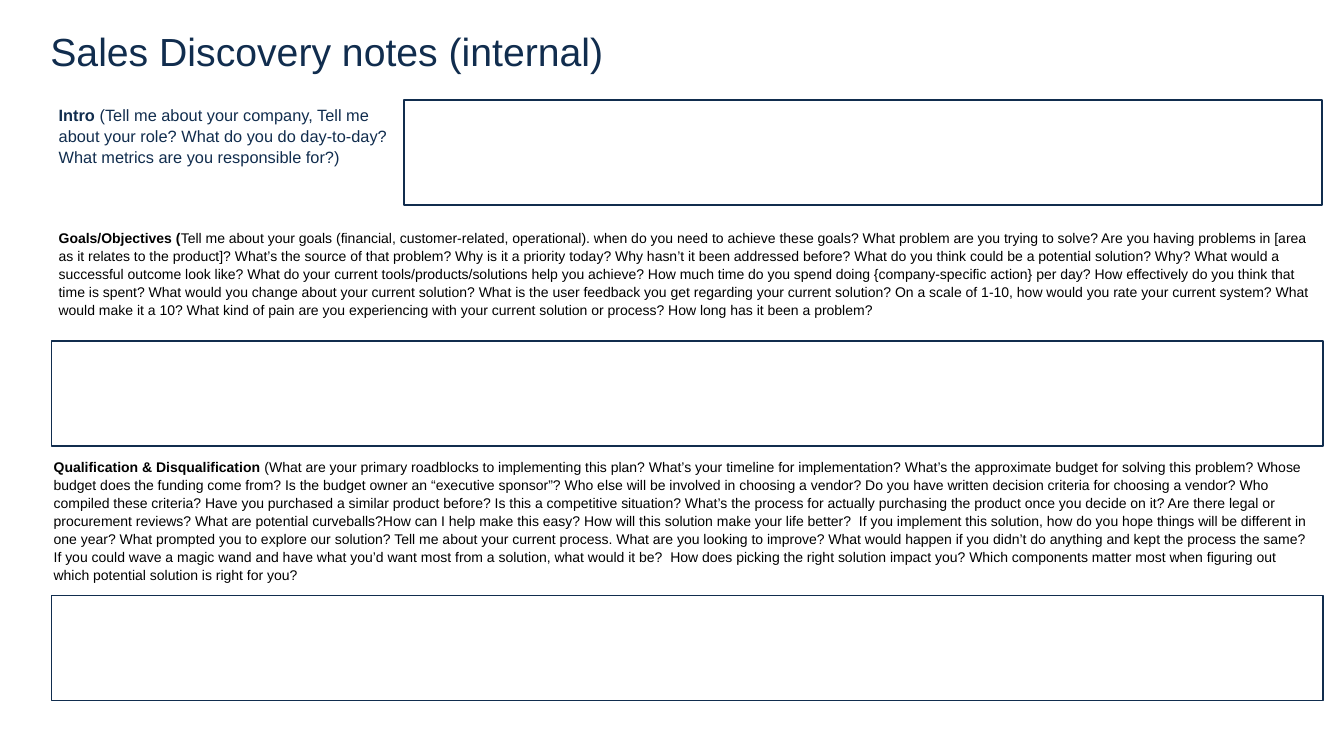
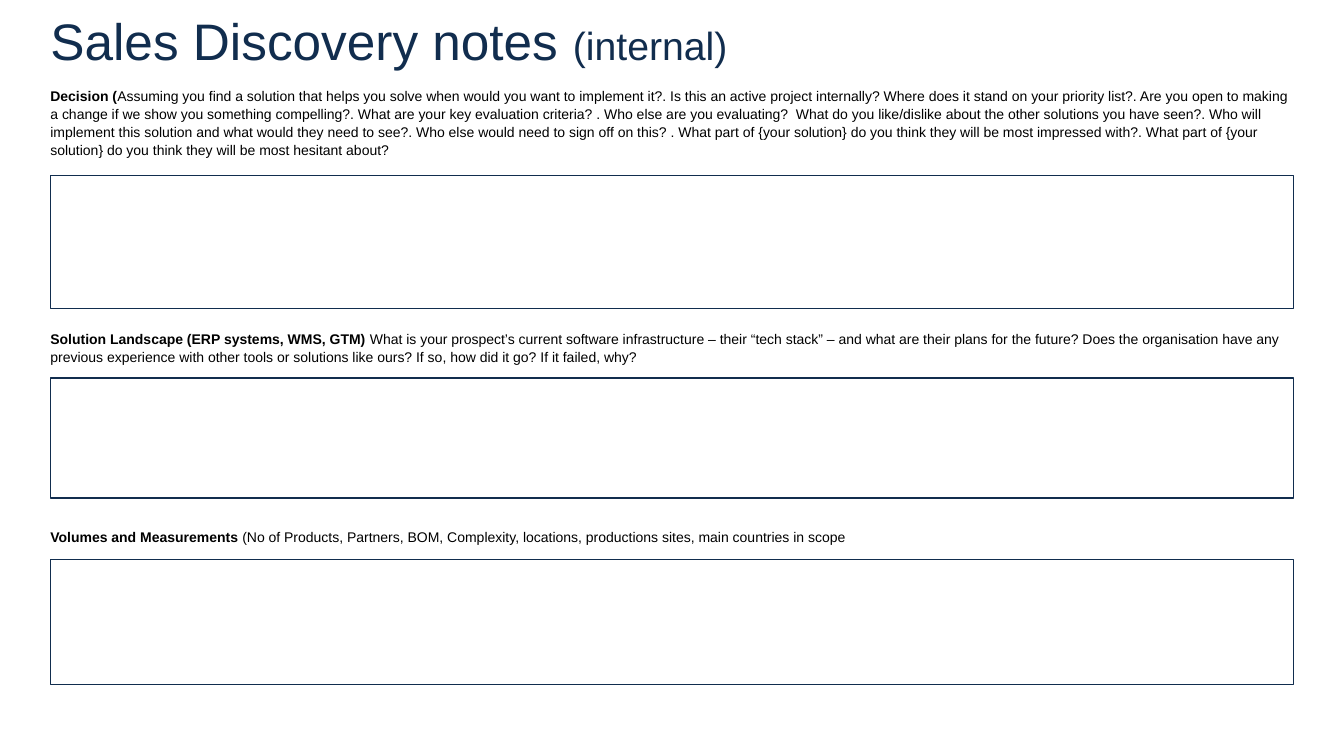
from pptx import Presentation
from pptx.dml.color import RGBColor
from pptx.enum.shapes import MSO_SHAPE as Shape
from pptx.enum.text import MSO_ANCHOR as Anchor
from pptx.util import Inches, Pt

HUES = {"navy": "112D4E", "black": "000000", "white": "FFFFFF"}
FONT = "Arial"
LEFT, WIDE = 0.6, 14.8

deck = Presentation()
deck.slide_width, deck.slide_height = Inches(16), Inches(9)


def add_text(slide, area, runs, hue="black", pad=(0, 0), anchor=Anchor.MIDDLE,
             line=1.07, after=8):
    """Add one paragraph; runs holds (text, size, bold), pad the side and top insets."""
    box = slide.shapes.add_textbox(*map(Inches, area))
    frame = box.text_frame
    frame.word_wrap = True
    frame.vertical_anchor = anchor
    frame.margin_left = frame.margin_right = Inches(pad[0])
    frame.margin_top = frame.margin_bottom = Inches(pad[1])
    para = frame.paragraphs[0]
    para.line_spacing = line
    para.space_after = Pt(after)
    for text, size, bold in runs:
        run = para.add_run()
        run.text = text
        run.font.name = FONT
        run.font.size = Pt(size)
        run.font.bold = bold
        run.font.color.rgb = RGBColor.from_string(HUES[hue])


def add_field(slide, area):
    """Add an empty outlined box for notes."""
    field = slide.shapes.add_shape(Shape.RECTANGLE, *map(Inches, area))
    field.shadow.inherit = False
    field.fill.background()
    field.line.color.rgb = RGBColor.from_string(HUES["navy"])
    field.line.width = Pt(1)


# Title top and runs of each slide
titles = [
    (0.18, [("Sales Discovery notes (internal)", 33.6, False)]),
    (0.06, [("Sales Discovery notes ", 44, False), ("(internal)", 33.6, False)]),
]
slides = []
for top, runs in titles:
    slide = deck.slides.add_slide(deck.slide_layouts[6])
    slide.background.fill.solid()
    slide.background.fill.fore_color.rgb = RGBColor.from_string(HUES["white"])
    add_text(slide, (LEFT, top, WIDE, 0.93), runs, "navy", line=0.9, after=0)
    slides.append(slide)

# Slide 1: text area, field area, size, colour, heading, lines of questions
topics = [
    ((0.6, 1.19, 4.15, 0.84), (4.81, 1.19, 10.93, 1.25), 14, "navy", "Intro ", [
        "(Tell me about your company, Tell me about your role?",
        "What do you do day-to-day? What metrics are you responsible for?)",
    ]),
    ((0.6, 2.67, 15.14, 1.17), (0.61, 4.06, 15.14, 1.25), 12, "black",
     "Goals/Objectives (", [
        "Tell me about your goals (financial, customer-related, operational).",
        "when do you need to achieve these goals? What problem are you trying to solve?",
        "Are you having problems in [area as it relates to the product]?",
        "What’s the source of that problem? Why is it a priority today?",
        "Why hasn’t it been addressed before?",
        "What do you think could be a potential solution? Why?",
        "What would a successful outcome look like?",
        "What do your current tools/products/solutions help you achieve?",
        "How much time do you spend doing {company-specific action} per day?",
        "How effectively do you think that time is spent?",
        "What would you change about your current solution?",
        "What is the user feedback you get regarding your current solution?",
        "On a scale of 1-10, how would you rate your current system?",
        "What would make it a 10?",
        "What kind of pain are you experiencing with your current solution or process?",
        "How long has it been a problem?",
    ]),
    ((0.54, 5.4, 15.21, 1.6), (0.61, 7.09, 15.14, 1.25), 12, "black",
     "Qualification & Disqualification ", [
        "(What are your primary roadblocks to implementing this plan?",
        "What’s your timeline for implementation?",
        "What’s the approximate budget for solving this problem?",
        "Whose budget does the funding come from?",
        "Is the budget owner an “executive sponsor”?",
        "Who else will be involved in choosing a vendor?",
        "Do you have written decision criteria for choosing a vendor?",
        "Who compiled these criteria? Have you purchased a similar product before?",
        "Is this a competitive situation?",
        "What’s the process for actually purchasing the product once you decide on it?",
        "Are there legal or procurement reviews?",
        "What are potential curveballs?How can I help make this easy?",
        "How will this solution make your life better?  If you implement this solution,",
        "how do you hope things will be different in one year?",
        "What prompted you to explore our solution? Tell me about your current process.",
        "What are you looking to improve? What would happen if you didn’t do anything",
        "and kept the process the same?  If you could wave a magic wand and have",
        "what you’d want most from a solution, what would it be?  How does picking",
        "the right solution impact you? Which components matter most when",
        "figuring out which potential solution is right for you?",
    ]),
]
for area, field, size, hue, head, body in topics:
    add_text(slides[0], area, [(head, size, True), (" ".join(body), size, False)], hue,
             pad=(0.1, 0.05), anchor=Anchor.TOP)
    add_field(slides[0], field)

# Slide 2: text top and height, field top and height, space after, heading, questions
topics = [
    (0.85, 1.21, 2.09, 1.58, 8, "Decision (", [
        "Assuming you find a solution that helps you solve",
        "when would you want to implement it?. Is this an active project internally?",
        "Where does it stand on your priority list?.",
        "Are you open to making a change if we show you something compelling?.",
        "What are your key evaluation criteria? .",
        "Who else are you evaluating?  What do you like/dislike about",
        "the other solutions you have seen?.",
        "Who will implement this solution and what would they need to see?.",
        "Who else would need to sign off on this? .",
        "What part of {your solution} do you think they will be most impressed with?.",
        "What part of {your solution} do you think they will be most hesitant about?",
    ]),
    (3.77, 0.73, 4.5, 1.43, 9.6, "Solution Landscape (ERP systems, WMS, GTM) ", [
        "What is your prospect’s current software infrastructure – their “tech stack” –",
        "and what are their plans for the future? Does the organisation have any",
        "previous experience with other tools or solutions like ours?",
        "If so, how did it go? If it failed, why?",
    ]),
    (6.11, 0.56, 6.66, 1.49, 8, "Volumes and Measurements ", [
        "(No of Products, Partners, BOM, Complexity, locations, productions sites,",
        "main countries in scope",
    ]),
]
for top, high, start, depth, after, head, body in topics:
    add_text(slides[1], (LEFT, top, WIDE, high),
             [(head, 12, True), (" ".join(body), 12, False)], after=after)
    add_field(slides[1], (LEFT, start, WIDE, depth))

deck.save("out.pptx")
